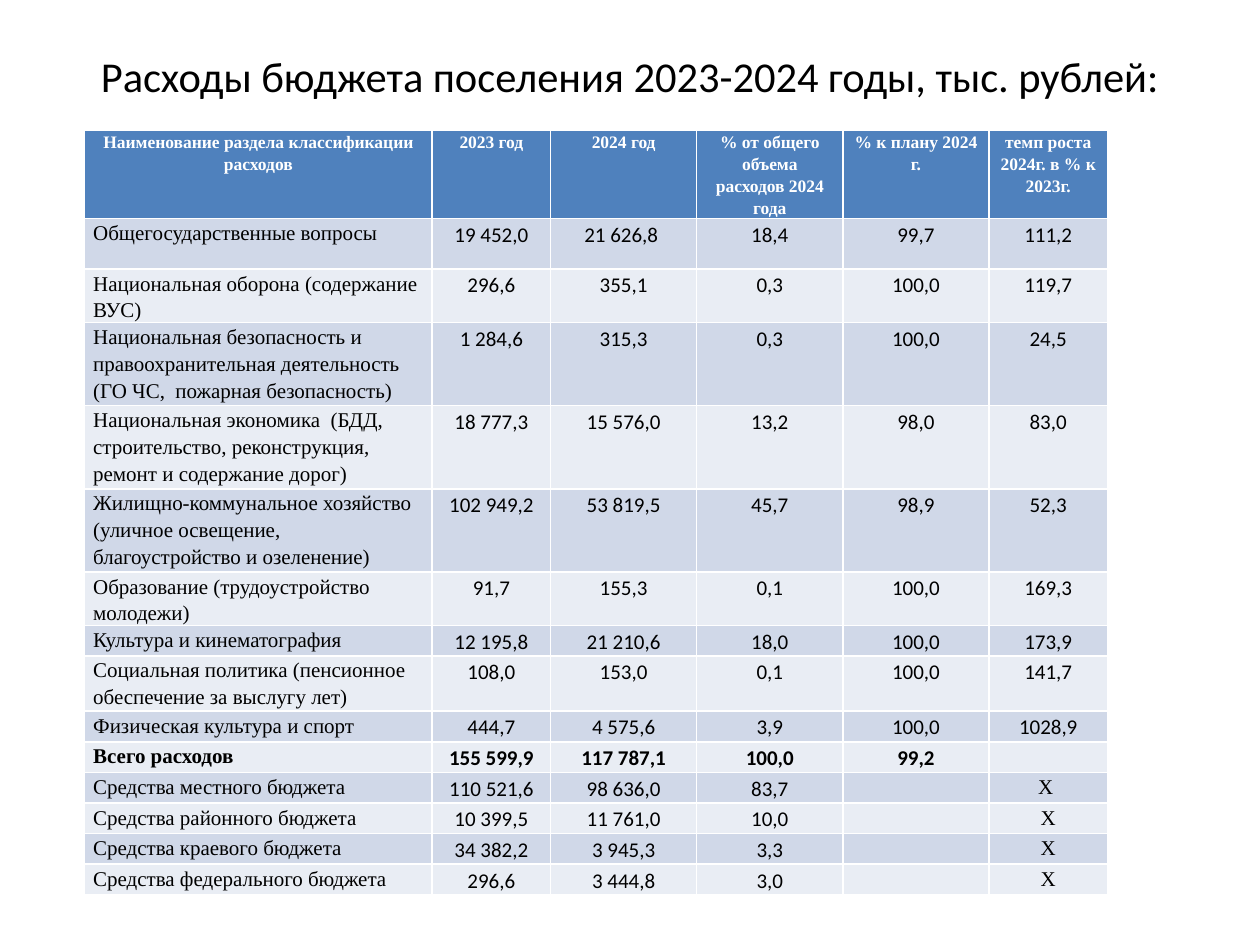
from lxml.etree import SubElement
from pptx import Presentation
from pptx.dml.color import RGBColor
from pptx.enum.text import MSO_ANCHOR, PP_ALIGN
from pptx.oxml.ns import qn
from pptx.util import Inches, Pt

COLORS = {"header": "4F81BD", "odd": "D0D8E8", "even": "E9EDF4",
          "text": "000000", "header_text": "FFFFFF"}
SERIF, SANS = "Times New Roman", "Calibri"
TITLE = "Расходы бюджета поселения 2023-2024 годы, тыс. рублей:"
TOTAL = "Всего расходов"
COLUMN_WIDTHS = [2.76, 0.94, 1.16, 1.16, 1.16, 0.94]
SINGLE_LINE = 17.5 / 72
ROW_HEIGHTS = [0.55, 0.4, 0.33, 0.66, 0.66, 0.66, 0.26, 0.24, 0.44] + [SINGLE_LINE] * 6
ROWS = [
    ["Наименование раздела классификации расходов", "2023 год", "2024 год",
     "% от общего объема расходов 2024 года", "% к плану 2024 г.",
     "темп роста 2024г. в % к 2023г."],
    ["Общегосударственные вопросы", "19 452,0", "21 626,8 ", "18,4", "99,7", "111,2"],
    ["Национальная оборона (содержание ВУС)", "296,6", "355,1", "0,3", "100,0", "119,7"],
    ["Национальная безопасность и правоохранительная деятельность "
     "(ГО ЧС,  пожарная безопасность)", "1 284,6", "315,3", "0,3", "100,0", "24,5"],
    ["Национальная экономика  (БДД, строительство, реконструкция, "
     "ремонт и содержание дорог)", "18 777,3", "15 576,0", "13,2", "98,0", "83,0"],
    ["Жилищно-коммунальное хозяйство (уличное освещение, "
     "благоустройство и озеленение)", "102 949,2", "53 819,5", "45,7", "98,9", "52,3"],
    ["Образование (трудоустройство молодежи)", "91,7", "155,3", "0,1", "100,0", "169,3"],
    ["Культура и кинематография", "12 195,8", "21 210,6", "18,0", "100,0", "173,9"],
    ["Социальная политика (пенсионное обеспечение за выслугу лет)",
     "108,0", "153,0", "0,1", "100,0", "141,7"],
    ["Физическая культура и спорт", "444,7", "4 575,6", "3,9", "100,0", "1028,9"],
    [TOTAL, "155 599,9", "117 787,1", "100,0", "99,2", ""],
    ["Средства местного бюджета", "110 521,6", "98 636,0", "83,7", "", "Х "],
    ["Средства районного бюджета", "10 399,5", "11 761,0", "10,0", "", "Х"],
    ["Средства краевого бюджета", "34 382,2", "3 945,3", "3,3", "", "Х"],
    ["Средства федерального бюджета", "296,6", "3 444,8", "3,0", "", "Х"],
]


def set_all(target, values):
    for name, value in values.items():
        setattr(target, name, value)


def write(para, text, font, size, color, bold=False):
    span = para.add_run()
    span.text = text
    set_all(span.font, {"name": font, "size": Pt(size), "bold": bold})
    span.font.color.rgb = RGBColor.from_string(COLORS[color])


def add_title(page):
    box = page.shapes.title
    set_all(box, {"left": Inches(0.5), "top": Inches(0.3),
                  "width": Inches(9), "height": Inches(1.25)})
    set_all(box.text_frame, {"vertical_anchor": MSO_ANCHOR.TOP, "word_wrap": True,
                             "margin_top": Inches(0.1)})
    para = box.text_frame.paragraphs[0]
    para.alignment = PP_ALIGN.CENTER
    write(para, TITLE, SANS, 24.3, "text")


def fill_cell(cell, text, row, column, bold):
    header = row == 0
    band = "header" if header else "odd" if row % 2 else "even"
    cell.fill.solid()
    cell.fill.fore_color.rgb = RGBColor.from_string(COLORS[band])
    side = Inches(0.08 if header else 0.07)
    set_all(cell, {"margin_left": side, "margin_right": side,
                   "margin_top": 0, "margin_bottom": 0})
    para = cell.text_frame.paragraphs[0]
    if not text:
        # The size of an empty paragraph keeps its row low.
        SubElement(para._p, qn("a:endParaRPr"), sz="1200")
        return
    centered = header or column > 0
    set_all(para, {"line_spacing": 1.15,
                   "alignment": PP_ALIGN.CENTER if centered else PP_ALIGN.LEFT})
    if header:
        write(para, text, SERIF, 10, "header_text", True)
    else:
        font = SERIF if column == 0 or text.startswith("Х") else SANS
        write(para, text, font, 12, "text", bold)


def add_budget_table(page):
    frame = page.shapes.add_table(
        len(ROWS), len(COLUMN_WIDTHS), Inches(0.67), Inches(1.03),
        Inches(sum(COLUMN_WIDTHS)), Inches(sum(ROW_HEIGHTS)))
    table = frame.table
    for column, width in zip(table.columns, COLUMN_WIDTHS):
        column.width = Inches(width)
    for row, height in zip(table.rows, ROW_HEIGHTS):
        row.height = Inches(height)
    for i, values in enumerate(ROWS):
        for j, text in enumerate(values):
            fill_cell(table.cell(i, j), text, i, j, values[0] == TOTAL)


def main():
    deck = Presentation()
    set_all(deck, {"slide_width": Inches(10), "slide_height": Inches(7.5)})
    page = deck.slides.add_slide(deck.slide_layouts[5])
    add_title(page)
    add_budget_table(page)
    deck.save("out.pptx")


if __name__ == "__main__":
    main()
